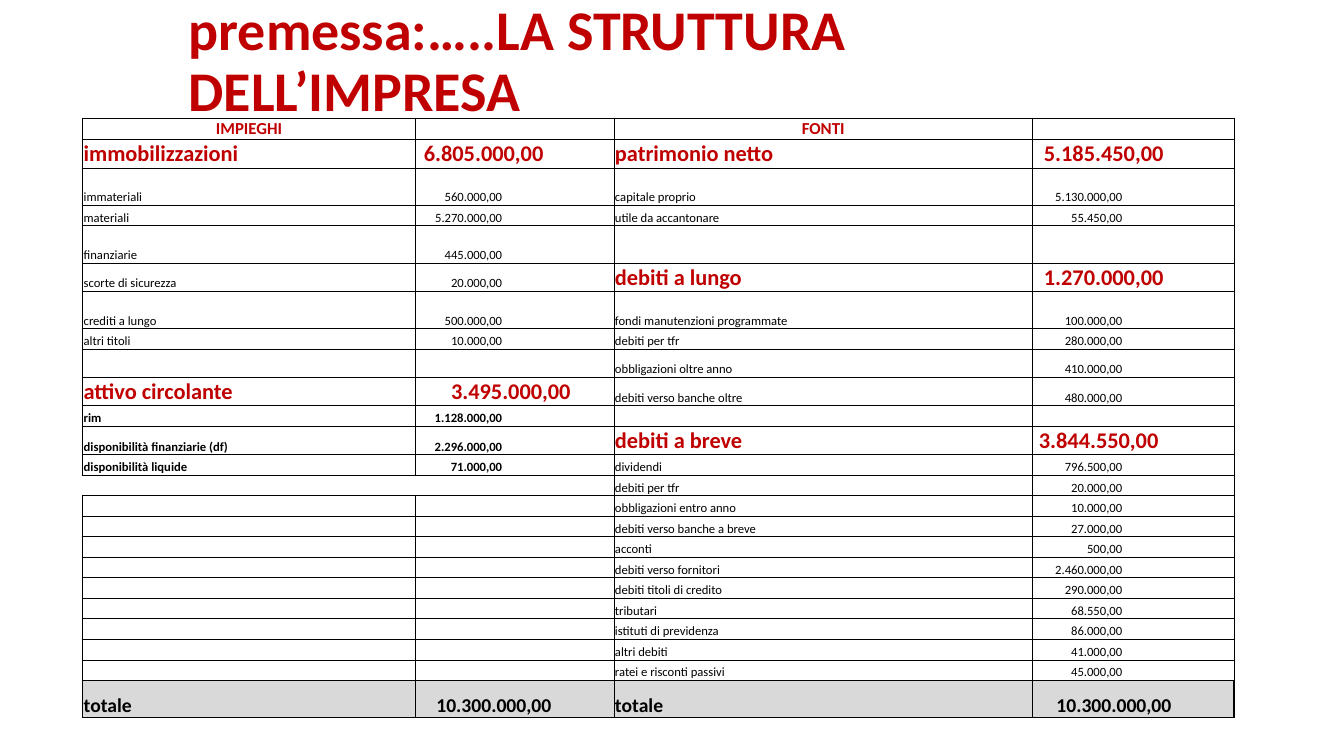
import dataclasses
import typing

import lxml.etree
import pptx
import pptx.dml.color
import pptx.enum.text
import pptx.oxml.ns
import pptx.table
import pptx.util

Inches = pptx.util.Inches
Align = pptx.enum.text.PP_ALIGN
Anchor = pptx.enum.text.MSO_ANCHOR


@dataclasses.dataclass(frozen=True)
class Style:
    size: int
    color: str
    bold: bool
    inset: float = 0.01


@dataclasses.dataclass(frozen=True)
class Theme:
    font: str = "Calibri"
    line: str = "000000"
    paper: str = "FFFFFF"
    shade: str = "D9D9D9"
    title: Style = Style(40, "C00000", True)
    label: Style = Style(12, "C00000", True)
    head: Style = Style(16, "C00000", True, 0.7)
    item: Style = Style(9, "000000", False, 1.11)
    strong: Style = Style(9, "000000", True, 1.11)
    total: Style = Style(14, "000000", True, 0.62)


THEME = Theme()


class Entry(typing.NamedTuple):
    name: str = ""
    sum: str = ""
    style: Style = THEME.item
    inset: float | None = None


class Edges(typing.NamedTuple):
    left: float = 0.5
    right: float = 0.5
    top: float = 0.5
    bottom: float = 0.5


LEFT = [
    Entry("IMPIEGHI", "", THEME.label),
    Entry("immobilizzazioni", "6.805.000,00", THEME.head),
    Entry("immateriali", "560.000,00"),
    Entry("materiali", "5.270.000,00"),
    Entry("finanziarie", "445.000,00"),
    Entry("scorte di sicurezza", "20.000,00"),
    Entry("crediti a lungo", "500.000,00"),
    Entry("altri titoli", "10.000,00"),
    Entry(),
    Entry("attivo circolante", "3.495.000,00", THEME.head, 0.43),
    Entry("rim", "1.128.000,00", THEME.strong),
    Entry("disponibilità finanziarie (df)", "2.296.000,00", THEME.strong),
    Entry("disponibilità liquide", "71.000,00", THEME.strong),
    *[Entry()] * 10,
    Entry("totale", "10.300.000,00", THEME.total),
]
RIGHT = [
    Entry("FONTI", "", THEME.label),
    Entry("patrimonio netto", "5.185.450,00", THEME.head),
    Entry("capitale proprio", "5.130.000,00"),
    Entry("utile da accantonare", "55.450,00"),
    Entry(),
    Entry("debiti a lungo", "1.270.000,00", THEME.head),
    Entry("fondi manutenzioni programmate", "100.000,00"),
    Entry("debiti per tfr", "280.000,00"),
    Entry("obbligazioni oltre anno", "410.000,00"),
    Entry("debiti verso banche oltre", "480.000,00"),
    Entry(),
    Entry("debiti a breve", "3.844.550,00", THEME.head, 0.75),
    Entry("dividendi", "796.500,00"),
    Entry("debiti per tfr", "20.000,00"),
    Entry("obbligazioni entro anno", "10.000,00"),
    Entry("debiti verso banche a breve", "27.000,00"),
    Entry("acconti", "500,00"),
    Entry("debiti verso fornitori", "2.460.000,00"),
    Entry("debiti titoli di credito", "290.000,00"),
    Entry("tributari", "68.550,00"),
    Entry("istituti di previdenza", "86.000,00"),
    Entry("altri debiti", "41.000,00"),
    Entry("ratei e risconti passivi", "45.000,00"),
    Entry("totale", "10.300.000,00", THEME.total),
]
WIDTHS = [3.3, 1.97, 4.15, 2]
HEIGHT = 5.94
LAST = len(LEFT) - 1
GAP = 13
FIXED = {0: 0.21, **dict.fromkeys((2, 4, 6, LAST), 0.37),
         **dict.fromkeys((1, 5, 8, 9, 11), 0.28)}
SLIM = (HEIGHT - sum(FIXED.values())) / (len(LEFT) - len(FIXED))
BORDERS = {
    (GAP, 0): Edges(left=0, right=0),
    (GAP, 1): Edges(left=0),
    (LAST, 0): Edges(left=1, bottom=1),
    (LAST, 1): Edges(bottom=1),
    (LAST, 2): Edges(right=1, bottom=1),
    (LAST, 3): Edges(left=1, right=1, bottom=1),
}


def paint(run: typing.Any, style: Style) -> None:
    run.font.name = THEME.font
    run.font.size = pptx.util.Pt(style.size)
    run.font.bold = style.bold
    run.font.color.rgb = pptx.dml.color.RGBColor.from_string(style.color)


def frame(cell: pptx.table._Cell, edges: Edges) -> None:
    props = cell._tc.get_or_add_tcPr()
    tag = pptx.oxml.ns.qn
    for side, width in zip("LRTB", edges):
        line = lxml.etree.SubElement(props, tag(f"a:ln{side}"), w=str(pptx.util.Pt(width)))
        if width:
            fill = lxml.etree.SubElement(line, tag("a:solidFill"))
            lxml.etree.SubElement(fill, tag("a:srgbClr"), val=THEME.line)
        else:
            lxml.etree.SubElement(line, tag("a:noFill"))


def write(cell: pptx.table._Cell, text: str, style: Style, align: Align,
          inset: float) -> None:
    cell.vertical_anchor = Anchor.BOTTOM
    cell.margin_left = cell.margin_top = Inches(0.01)
    cell.margin_right = Inches(inset)
    cell.margin_bottom = 0
    para = cell.text_frame.paragraphs[0]
    para.alignment = align
    if text:
        para.text = text
        paint(para.runs[0], style)
    else:
        para._p.get_or_add_endParaRPr().set("sz", str(style.size * 100))


def draw_title(slide: typing.Any) -> None:
    title = slide.shapes.title
    title.left, title.top = Inches(1.77), Inches(0.17)
    title.width, title.height = Inches(9.96), Inches(0.91)
    box = title.text_frame
    box.text = "premessa:…..LA STRUTTURA DELL’IMPRESA"
    box.word_wrap = True
    box.auto_size = pptx.enum.text.MSO_AUTO_SIZE.NONE
    box.vertical_anchor = Anchor.MIDDLE
    para = box.paragraphs[0]
    para.alignment = Align.LEFT
    para.line_spacing = 0.9
    paint(para.runs[0], THEME.title)


def draw_table(slide: typing.Any) -> None:
    table = slide.shapes.add_table(
        len(LEFT), len(WIDTHS), Inches(0.82), Inches(1.17),
        Inches(sum(WIDTHS)), Inches(HEIGHT)).table
    table.first_row = table.horz_banding = False
    for col, width in zip(table.columns, WIDTHS):
        col.width = Inches(width)
    for row, pair in enumerate(zip(LEFT, RIGHT)):
        table.rows[row].height = Inches(FIXED.get(row, SLIM))
        for side, entry in enumerate(pair):
            style = entry.style
            inset = style.inset if entry.inset is None else entry.inset
            name, value = (table.cell(row, 2 * side + part) for part in (0, 1))
            align = Align.CENTER if style is THEME.label else Align.LEFT
            write(name, entry.name, style, align, 0.01)
            write(value, entry.sum, style, Align.RIGHT, inset)
        for col in range(len(WIDTHS)):
            cell = table.cell(row, col)
            frame(cell, BORDERS.get((row, col), Edges()))
            cell.fill.solid()
            shade = THEME.shade if row == LAST else THEME.paper
            cell.fill.fore_color.rgb = pptx.dml.color.RGBColor.from_string(shade)


def main() -> None:
    deck = pptx.Presentation()
    deck.slide_width, deck.slide_height = Inches(13.33), Inches(7.5)
    slide = deck.slides.add_slide(deck.slide_layouts[5])
    draw_title(slide)
    draw_table(slide)
    deck.save("out.pptx")


if __name__ == "__main__":
    main()
